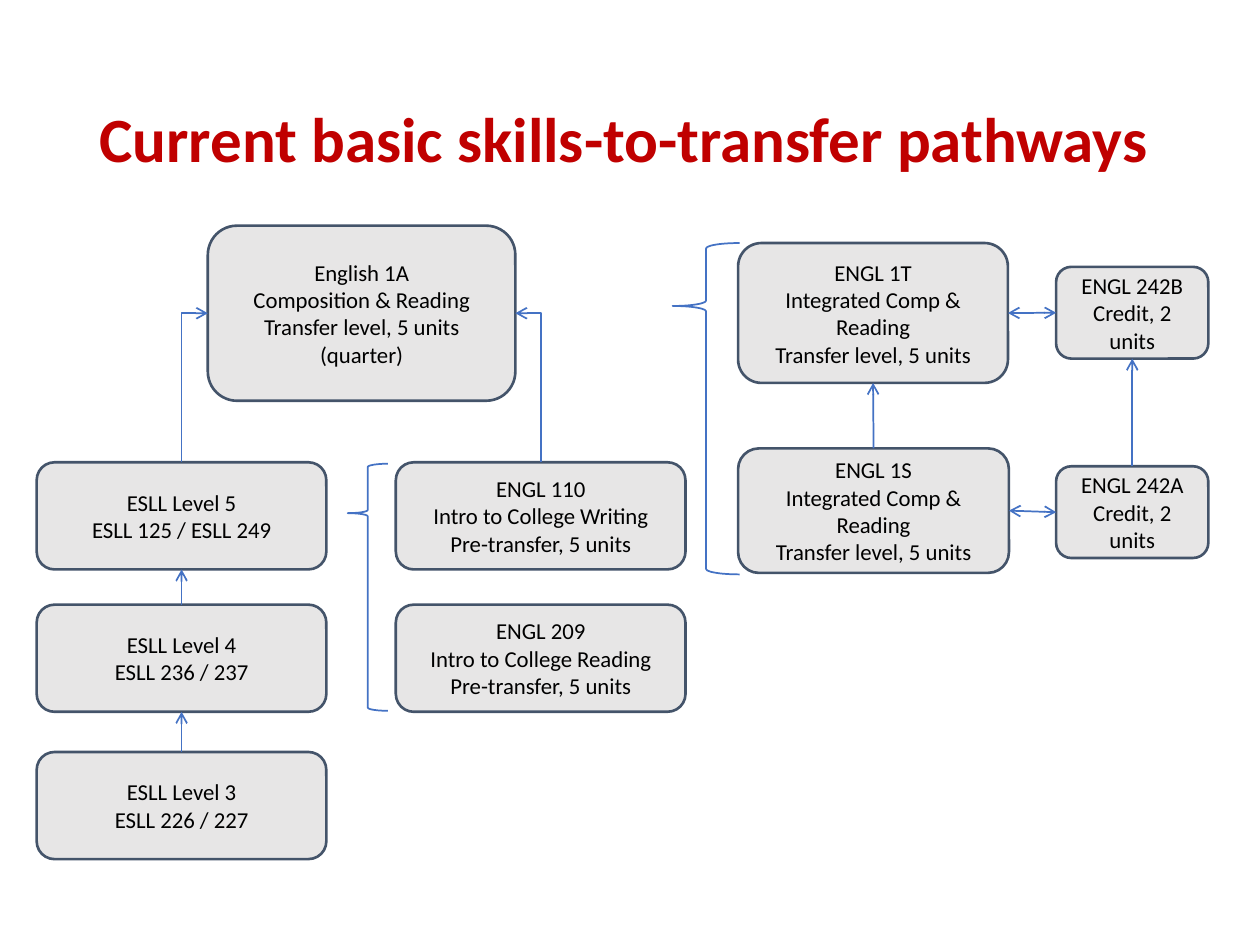
from lxml import etree
from pptx import Presentation
from pptx.dml.color import RGBColor
from pptx.enum import shapes, text
from pptx.oxml import ns
from pptx.util import Cm, Pt

COLORS = {"title": "C00000", "box": "E7E6E6", "border": "44546A",
          "arrow": "4472C4", "text": "000000"}
TOP, LEFT, BOTTOM, RIGHT = range(4)  # connection sites of a box


def set_line(shape, color, width):
    shape.line.color.rgb = RGBColor.from_string(COLORS[color])
    shape.line.width = Pt(width)


def style_arrow(arrow, ends):
    """Color a connector, add the named line ends and remove its shadow."""
    set_line(arrow, "arrow", 1)
    line = arrow.line._get_or_add_ln()
    for end in ends:
        etree.SubElement(line, ns.qn(f"a:{end}"), type="arrow")
    etree.SubElement(arrow._element.spPr, ns.qn("a:effectLst"))


deck = Presentation()
deck.slide_width, deck.slide_height = Cm(25.4), Cm(19.05)
page = deck.slides.add_slide(deck.slide_layouts[5])

# Title
title = page.shapes.title
title.left, title.top, title.width, title.height = map(Cm, (1.75, 1.02, 21.89, 3.68))
title.text_frame.text = "Current basic skills-to-transfer pathways"
title_frame = {"auto_size": text.MSO_AUTO_SIZE.NONE, "word_wrap": True,
               "vertical_anchor": text.MSO_ANCHOR.MIDDLE}
for name, value in title_frame.items():
    setattr(title.text_frame, name, value)
para = title.text_frame.paragraphs[0]
para.alignment, para.line_spacing = text.PP_ALIGN.LEFT, 0.9
for name, value in {"name": "Calibri", "size": Pt(36), "bold": True}.items():
    setattr(para.runs[0].font, name, value)
para.runs[0].font.color.rgb = RGBColor.from_string(COLORS["title"])

# Course boxes: left, top, width, height, lines
esll_left, engl_left, integrated_left, support_left = 0.74, 7.98, 14.88, 21.29
level_size, support_size = (5.84, 2.16), (3.07, 1.85)
integrated_lines = ["Integrated Comp & Reading", "Transfer level, 5 units"]
courses = {
    "1A": (4.19, 4.55, 6.2, 3.53,
           ["English 1A", "Composition & Reading", "Transfer level, 5 units (quarter)"]),
    "L5": (esll_left, 9.32, *level_size, ["ESLL Level 5", "ESLL 125 / ESLL 249"]),
    "L4": (esll_left, 12.19, *level_size, ["ESLL Level 4", "ESLL 236 / 237"]),
    "L3": (esll_left, 15.16, *level_size, ["ESLL Level 3", "ESLL 226 / 227"]),
    "110": (engl_left, 9.32, *level_size,
            ["ENGL 110", "Intro to College Writing", "Pre-transfer, 5 units"]),
    "209": (engl_left, 12.19, *level_size,
            ["ENGL 209", "Intro to College Reading", "Pre-transfer, 5 units"]),
    "1T": (integrated_left, 4.9, 5.44, 2.82, ["ENGL 1T", *integrated_lines]),
    "1S": (integrated_left, 9.04, 5.46, 2.51, ["ENGL 1S", *integrated_lines]),
    "242B": (support_left, 5.38, *support_size, ["ENGL 242B", "Credit, 2 units"]),
    "242A": (support_left, 9.4, *support_size, ["ENGL 242A", "Credit, 2 units"]),
}
box_frame = {"word_wrap": True, "vertical_anchor": text.MSO_ANCHOR.MIDDLE,
             "margin_left": Cm(0.25), "margin_right": Cm(0.25),
             "margin_top": Cm(0.25), "margin_bottom": Cm(0.25)}
boxes = {}
for course, (*place, lines) in courses.items():
    box = page.shapes.add_shape(shapes.MSO_SHAPE.ROUNDED_RECTANGLE, *map(Cm, place))
    box.shadow.inherit = False
    box.fill.solid()
    box.fill.fore_color.rgb = RGBColor.from_string(COLORS["box"])
    set_line(box, "border", 1.5)
    for name, value in box_frame.items():
        setattr(box.text_frame, name, value)
    box.text_frame.text = "\n".join(lines)
    for para in box.text_frame.paragraphs:
        para.alignment = text.PP_ALIGN.CENTER
        span = para.runs[0]
        span.font.name, span.font.size = "Calibri", Pt(13)
        span.font.color.rgb = RGBColor.from_string(COLORS["text"])
    boxes[course] = box

# Braces: place, height of the point
for place, point in (((7.01, 9.35, 0.81, 4.98), 0.2), ((13.56, 4.9, 1.35, 6.68), 0.19)):
    brace = page.shapes.add_shape(shapes.MSO_SHAPE.LEFT_BRACE, *map(Cm, place))
    brace.adjustments[0], brace.adjustments[1] = 0.08, point
    brace.shadow.inherit = False
    brace.fill.background()
    set_line(brace, "arrow", 1)

# Straight arrows between boxes
one_way, both_ways = ["tailEnd"], ["headEnd", "tailEnd"]
links = [
    ("L3", TOP, "L4", BOTTOM, one_way),
    ("L4", TOP, "L5", BOTTOM, one_way),
    ("1S", TOP, "1T", BOTTOM, one_way),
    ("242A", TOP, "242B", BOTTOM, one_way),
    ("242B", LEFT, "1T", RIGHT, both_ways),
    ("1S", RIGHT, "242A", LEFT, both_ways),
]
for start, start_site, goal, goal_site, ends in links:
    arrow = page.shapes.add_connector(shapes.MSO_CONNECTOR.STRAIGHT, 0, 0, 0, 0)
    arrow.begin_connect(boxes[start], start_site)
    arrow.end_connect(boxes[goal], goal_site)
    style_arrow(arrow, ends)

# Bent arrows into English 1A; each is laid out flat, then turned upright
transfer = boxes["1A"]
goal_y = transfer.top + transfer.height // 2
for start, goal_x, side, turn in (("L5", transfer.left, 1, 90),
                                  ("110", transfer.left + transfer.width, -1, 270)):
    start_x = boxes[start].left + boxes[start].width // 2
    start_y = boxes[start].top
    center_x, center_y = (start_x + goal_x) // 2, (start_y + goal_y) // 2
    half_rise, half_run = (start_y - goal_y) // 2, abs(goal_x - start_x) // 2
    arrow = page.shapes.add_connector(
        shapes.MSO_CONNECTOR.ELBOW,
        center_x + side * half_rise, center_y + half_run,
        center_x - side * half_rise, center_y - half_run)
    properties = arrow._element.spPr
    properties.find(ns.qn("a:prstGeom")).set("prst", "bentConnector2")
    properties.find(ns.qn("a:xfrm")).set("rot", str(turn * 60000))
    style_arrow(arrow, one_way)

deck.save("out.pptx")
